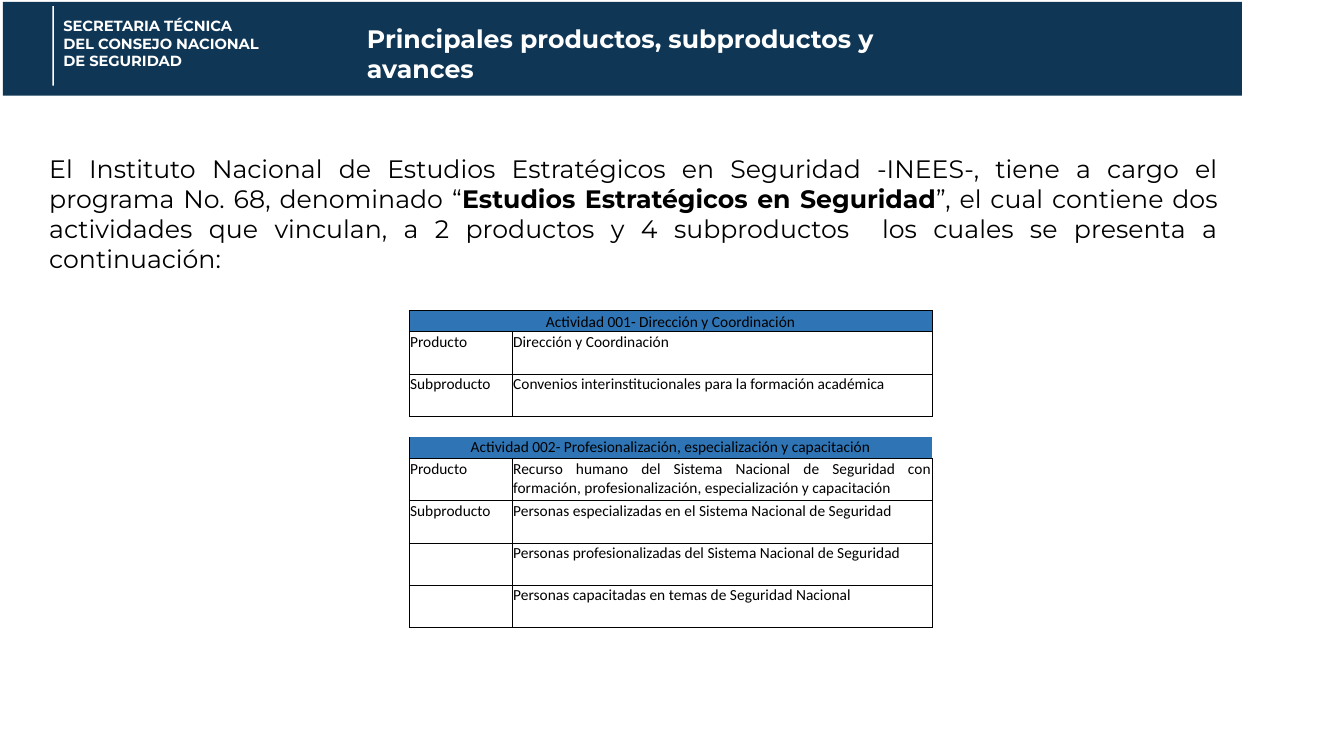
from pptx import Presentation
from pptx.dml.color import RGBColor
from pptx.enum import shapes, text
from pptx.oxml import parse_xml
from pptx.oxml.ns import nsdecls
from pptx.util import Pt

NAVY = RGBColor(0x0F, 0x36, 0x55)
BLUE = RGBColor(0x2F, 0x75, 0xB5)
WHITE = RGBColor(255, 255, 255)
BLACK = RGBColor(0, 0, 0)
LEFT, MID, JUST = text.PP_ALIGN.LEFT, text.PP_ALIGN.CENTER, text.PP_ALIGN.JUSTIFY

TITLE = "Principales productos, subproductos y avances"
OFFICE = ["SECRETARIA TÉCNICA", "DEL CONSEJO NACIONAL", "DE SEGURIDAD"]
INTRO = [
    ("El Instituto Nacional de Estudios Estratégicos en Seguridad -INEES-, tiene a cargo el programa No. 68, denominado “", False),
    ("Estudios Estratégicos en Seguridad", True),
    ("”, el cual contiene dos actividades que vinculan, a 2 productos y 4 subproductos  los cuales se presenta a continuación:", False),
]
ROWS = [
    ("head", "Actividad 001- Dirección y Coordinación", "", MID),
    ("item", "Producto", "Dirección y Coordinación", LEFT),
    ("item", "Subproducto", "Convenios interinstitucionales para la formación académica", LEFT),
    ("gap", "", "", LEFT),
    ("head", "Actividad 002- Profesionalización, especialización y capacitación", "", MID),
    ("item", "Producto", "Recurso humano del Sistema Nacional de Seguridad con formación, profesionalización, especialización y capacitación", JUST),
    ("item", "Subproducto", "Personas especializadas en el Sistema Nacional de Seguridad", JUST),
    ("item", "", "Personas profesionalizadas del Sistema Nacional de Seguridad", JUST),
    ("item", "", "Personas capacitadas en temas de Seguridad Nacional", JUST),
]
WIDTHS = [73.7] + [60] * 5
HIGH = {"head": 15.1, "item": 30.2, "gap": 15.1}
SPAN = {"head": 0, "item": 1}


def block(x, y, w, h, color):
    box = slide.shapes.add_shape(shapes.MSO_SHAPE.RECTANGLE, Pt(x), Pt(y), Pt(w), Pt(h))
    box.shadow.inherit = False
    box.fill.solid()
    box.fill.fore_color.rgb = color
    box.line.fill.background()


def label(x, y, w, h):
    frame = slide.shapes.add_textbox(Pt(x), Pt(y), Pt(w), Pt(h)).text_frame
    frame.word_wrap = True
    return frame


def style(para, face, size, color, bold=None, align=LEFT):
    para.alignment = align
    font = para.font
    font.name, font.size, font.bold = face, Pt(size), bold
    font.color.rgb = color


def border(cell, sides):
    props = cell._tc.get_or_add_tcPr()
    for spot, side in enumerate("lrtb"):
        paint = '<a:solidFill><a:srgbClr val="000000"/></a:solidFill>' if side in sides else "<a:noFill/>"
        props.insert(spot, parse_xml(f'<a:ln{side.upper()} w="6350" {nsdecls("a")}>{paint}</a:ln{side.upper()}>'))


def build_table():
    grid = slide.shapes.add_table(len(ROWS), len(WIDTHS), Pt(292.3), Pt(221.8),
                                  Pt(sum(WIDTHS)), Pt(sum(HIGH[r[0]] for r in ROWS))).table
    grid.first_row = grid.horz_banding = False
    for col, wide in zip(grid.columns, WIDTHS):
        col.width = Pt(wide)
    last = len(WIDTHS) - 1
    for i, (kind, first, second, align) in enumerate(ROWS):
        grid.rows[i].height = Pt(HIGH[kind])
        sides = "t" if kind == "gap" else "lb" if kind == "head" and i else "lrtb"
        for j in range(last + 1):
            cell = grid.cell(i, j)
            cell.margin_left = cell.margin_right = cell.margin_top = Pt(0.6)
            cell.margin_bottom = 0
            if kind == "head":
                cell.fill.solid()
                cell.fill.fore_color.rgb = BLUE
            else:
                cell.fill.background()
            border(cell, sides)
            para = cell.text_frame.paragraphs[0]
            words = (first, second)[j] if j < 2 else ""
            if words:
                para.text = words
            else:
                para._p.get_or_add_endParaRPr().set("sz", "1100")
            style(para, "Calibri", 11, BLACK, False, align if j or kind == "head" else LEFT)
        if kind in SPAN:
            grid.cell(i, SPAN[kind]).merge(grid.cell(i, last))
    grid.cell(0, 0).vertical_anchor = text.MSO_ANCHOR.BOTTOM


deck = Presentation()
deck.slide_width, deck.slide_height = Pt(960), Pt(540)
slide = deck.slides.add_slide(deck.slide_layouts[5])

block(2, 1.4, 885, 67, NAVY)
org = label(38.2, 8.6, 271.4, 45.4)
for n, line in enumerate(OFFICE):
    para = org.add_paragraph() if n else org.paragraphs[0]
    para.text = line
    style(para, "Montserrat", 10.5, WHITE, True)
block(37.4, 4.3, 1.2, 56.9, WHITE)

title = slide.shapes.title
title.left, title.top, title.width, title.height = Pt(254.9), Pt(13), Pt(437.8), Pt(51)
title.text = TITLE
frame = title.text_frame
frame.word_wrap = True
frame.auto_size = text.MSO_AUTO_SIZE.NONE
frame.vertical_anchor = text.MSO_ANCHOR.TOP
style(frame.paragraphs[0], "Montserrat", 18, WHITE, True)
slide.shapes._spTree.append(title._element)

intro = label(28.1, 105.8, 848.9, 94.3).paragraphs[0]
for words, bold in INTRO:
    run = intro.add_run()
    run.text = words
    run.font.bold = bold
style(intro, "Montserrat", 18, BLACK, align=JUST)

build_table()
deck.save("out.pptx")
